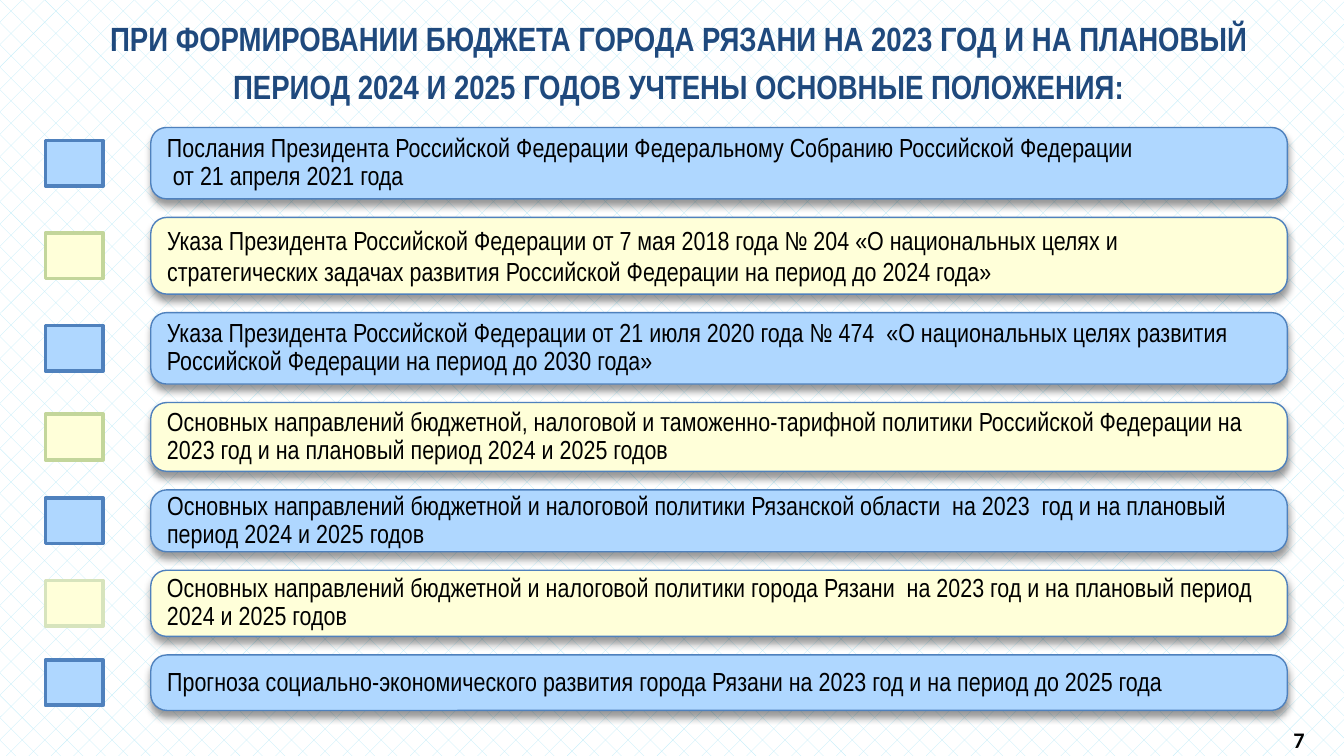
from lxml import etree
from pptx import Presentation
from pptx import util as u
from pptx.dml.color import RGBColor
from pptx.enum import dml, shapes, text
from pptx.oxml import ns

COLORS = {
    "blue": "AFD7FF", "cream": "FFFFD9", "edge": "4F81BD", "green": "C3D69B",
    "pale": "D7E4BD", "title": "1F497D", "black": "000000", "white": "FFFFFF",
    "brick": "BDECF9",
}
GAP = 0.35
FIRST_TOP = 2.41
MARK_W, MARK_H = 1.09, 0.86
TITLE = ("ПРИ ФОРМИРОВАНИИ БЮДЖЕТА ГОРОДА РЯЗАНИ НА 2023 ГОД И НА ПЛАНОВЫЙ "
         "ПЕРИОД 2024 И 2025 ГОДОВ УЧТЕНЫ ОСНОВНЫЕ ПОЛОЖЕНИЯ:")
ROWS = [
    (1.35, "blue", "edge", 0.9, "Послания Президента Российской Федерации Федеральному Собранию "
     "Российской Федерации\v от 21 апреля 2021 года"),
    (1.45, "cream", "green", 1.0, "Указа Президента Российской Федерации от 7 мая 2018 года № 204 "
     "«О национальных целях и стратегических задачах развития Российской Федерации "
     "на период до 2024 года»"),
    (1.35, "blue", "edge", 0.9, "Указа Президента Российской Федерации от 21 июля 2020 года № 474  "
     "«О национальных целях развития Российской Федерации на период до 2030 года»"),
    (1.3, "cream", "green", 0.9, "Основных направлений бюджетной, налоговой и таможенно-тарифной "
     "политики Российской Федерации на 2023 год и на плановый период 2024 и 2025 годов"),
    (1.17, "blue", "edge", 0.9, "Основных направлений бюджетной и налоговой политики Рязанской "
     "области  на 2023  год и на плановый период 2024 и 2025 годов"),
    (1.25, "cream", "pale", 0.9, "Основных направлений бюджетной и налоговой политики города Рязани  "
     "на 2023 год и на плановый период 2024 и 2025 годов"),
    (1.05, "blue", "edge", 0.9, "Прогноза социально-экономического развития города Рязани "
     "на 2023 год и на период до 2025 года"),
]


class Deck:
    """Holds the style and the current slide."""

    def __init__(self, prs):
        self.font = "Arial Narrow"
        self.s = prs.slides.add_slide(prs.slide_layouts[5])

    def rgb(self, name):
        return RGBColor.from_string(COLORS[name])

    def background(self):
        fill = self.s.background.fill
        fill.patterned()
        fill.pattern = dml.MSO_PATTERN.DIAGONAL_BRICK
        fill.fore_color.rgb = self.rgb("brick")
        fill.back_color.rgb = self.rgb("white")

    def label(self, sp, words, size, color="black", bold=False, font=None,
              align=text.PP_ALIGN.LEFT, spacing=1.0, inset=0.25):
        tf = sp.text_frame
        tf.word_wrap = True
        tf.auto_size = text.MSO_AUTO_SIZE.NONE
        tf.vertical_anchor = text.MSO_ANCHOR.MIDDLE
        tf.margin_left = tf.margin_right = u.Cm(inset)
        tf.margin_top = tf.margin_bottom = 0
        p = tf.paragraphs[0]
        p.text = words
        p.alignment = align
        p.line_spacing = spacing
        for r in p.runs:
            r.font.name = font or self.font
            r.font.size = u.Pt(size)
            r.font.bold = bold
            r.font.color.rgb = self.rgb(color)

    def title(self, words, x, y, w, h):
        sp = self.s.shapes.title
        sp.left, sp.top, sp.width, sp.height = (u.Cm(v) for v in (x, y, w, h))
        self.label(sp, words, 18, "title", True, align=text.PP_ALIGN.CENTER, spacing=1.2)

    def box(self, kind, x, y, w, h, fill, line, weight):
        sp = self.s.shapes.add_shape(kind, *(u.Cm(v) for v in (x, y, w, h)))
        sp.shadow.inherit = False
        sp.fill.solid()
        sp.fill.fore_color.rgb = self.rgb(fill)
        sp.line.color.rgb = self.rgb(line)
        sp.line.width = u.Pt(weight)
        return sp

    def mark(self, x, y, fill, line):
        self.box(shapes.MSO_SHAPE.RECTANGLE, x, y, MARK_W, MARK_H, fill, line, 2)

    def panel(self, x, y, w, h, fill, words, spacing):
        sp = self.box(shapes.MSO_SHAPE.ROUNDED_RECTANGLE, x, y, w, h, fill, "edge", 0.75)
        sp.adjustments[0] = round(0.3 / h, 2)
        self.drop_shadow(sp)
        self.label(sp, words, 14, spacing=spacing, inset=0.22)

    def drop_shadow(self, sp):
        effects = sp._element.spPr.find(ns.qn("a:effectLst"))
        shadow = etree.SubElement(effects, ns.qn("a:outerShdw"), blurRad=str(u.Pt(4)),
                                  dist=str(u.Pt(3)), dir="5400000", rotWithShape="0")
        color = etree.SubElement(shadow, ns.qn("a:srgbClr"), val=COLORS["black"])
        etree.SubElement(color, ns.qn("a:alpha"), val="40000")

    def page_number(self, words, x, y, w, h):
        sp = self.s.shapes.add_textbox(*(u.Cm(v) for v in (x, y, w, h)))
        self.label(sp, words, 11.9, bold=True, font="Calibri", align=text.PP_ALIGN.CENTER)


def main():
    prs = Presentation()
    prs.slide_width, prs.slide_height = u.Cm(25.4), u.Cm(14.29)
    deck = Deck(prs)
    deck.background()
    deck.title(TITLE, 1.4, 0.1, 22.86, 2)
    top = FIRST_TOP
    for height, fill, line, spacing, words in ROWS:
        deck.mark(0.86, top + (height - MARK_H) / 2, fill, line)
        deck.panel(2.85, top, 21.48, height, fill, words, spacing)
        top += height + GAP
    deck.page_number("7", 23.7, 13.65, 1.7, 0.66)
    prs.save("out.pptx")


if __name__ == "__main__":
    main()
